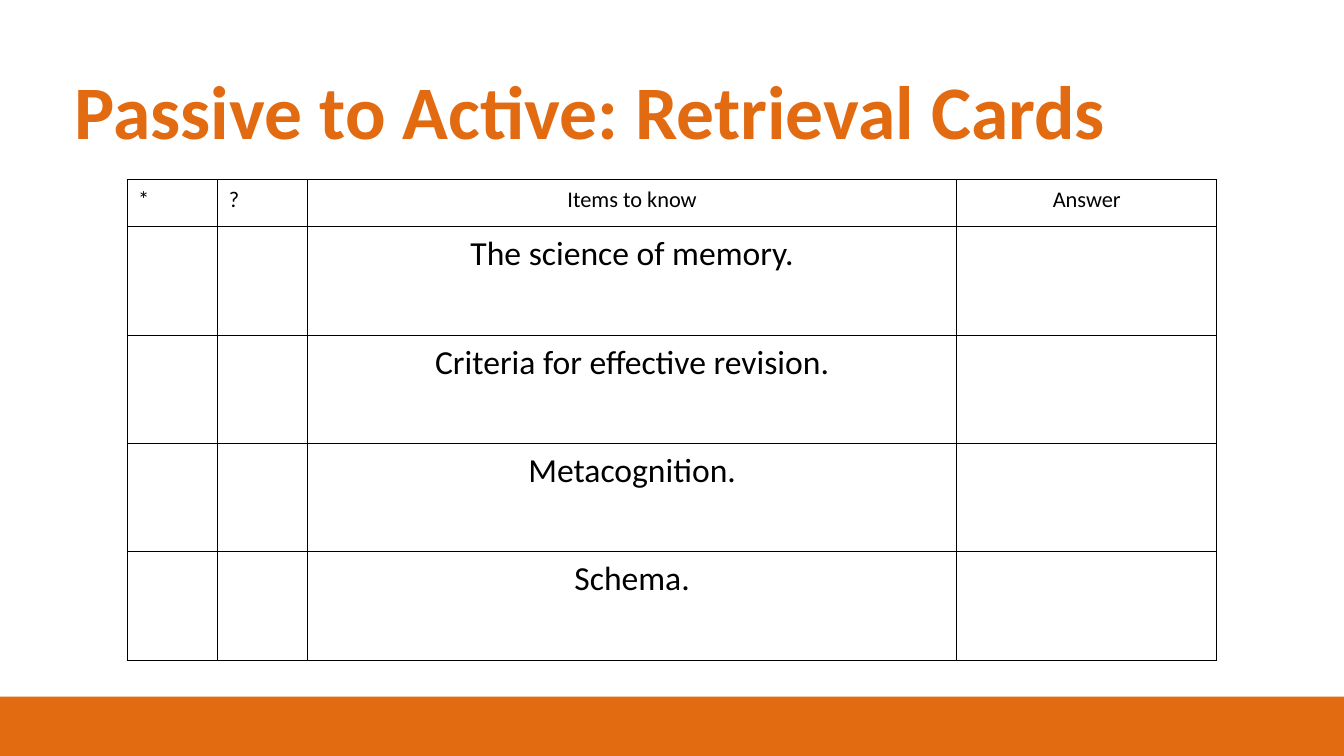
"""Build the retrieval cards slide: a title, a table of items and a footer band."""
from lxml import etree
from pptx import Presentation
from pptx import util as u
from pptx.dml.color import RGBColor
from pptx.enum import shapes, text
from pptx.oxml.ns import qn

HEADING = "Passive to Active: Retrieval Cards"
HEADERS = ["*", "?", "Items to know", "Answer"]
ITEMS = ["The science of memory.", "Criteria for effective revision.",
         "Metacognition.", "Schema."]

ORANGE = RGBColor(0xE2, 0x6A, 0x11)
BLACK = RGBColor(0, 0, 0)
FONT = "Calibri"
WIDTH, HEIGHT = 13.33, 7.5
COLUMNS = [0.9, 0.89, 6.44, 2.58]
HEADER_ROW, ITEM_ROW = 0.47, 1.075
ITEM_COLUMN = HEADERS.index("Items to know")
CARDS_LEFT, CARDS_TOP = 1.26, 1.78
BAND = 0.59
LEFT, CENTER = text.PP_ALIGN.LEFT, text.PP_ALIGN.CENTER


def write(frame, words, size, color=BLACK, bold=False, align=LEFT, spacing=None):
    paragraph = frame.paragraphs[0]
    paragraph.alignment = align
    if spacing:
        paragraph.line_spacing = spacing
    paragraph.font.size = u.Pt(size)
    if words:
        run = paragraph.add_run()
        run.text = words
        run.font.name, run.font.size, run.font.bold = FONT, u.Pt(size), bold
        run.font.color.rgb = color


def outline(cell, color=BLACK, weight=0.75):
    properties = cell._tc.get_or_add_tcPr()
    for side in ("lnL", "lnR", "lnT", "lnB"):
        edge = etree.SubElement(properties, qn(f"a:{side}"), w=str(u.Pt(weight)))
        fill = etree.SubElement(edge, qn("a:solidFill"))
        etree.SubElement(fill, qn("a:srgbClr"), val=str(color))


def add_band(slide):
    band = slide.shapes.add_shape(
        shapes.MSO_SHAPE.RECTANGLE, 0, u.Inches(HEIGHT - BAND),
        u.Inches(WIDTH), u.Inches(BAND))
    band.shadow.inherit = False
    band.fill.solid()
    band.fill.fore_color.rgb = ORANGE
    band.line.fill.background()


def add_heading(slide):
    heading = slide.shapes.add_textbox(
        u.Inches(0.7), u.Inches(0.66), u.Inches(10.76), u.Inches(0.82)).text_frame
    heading.word_wrap = True
    heading.margin_left = heading.margin_right = u.Inches(0.04)
    heading.margin_top, heading.margin_bottom = u.Inches(0.08), 0
    write(heading, HEADING, 54, color=ORANGE, bold=True, spacing=0.9)


def add_cards(slide):
    rows = [HEADERS] + [
        [item if column == ITEM_COLUMN else "" for column in range(len(COLUMNS))]
        for item in ITEMS]
    heights = [HEADER_ROW] + [ITEM_ROW] * len(ITEMS)
    cards = slide.shapes.add_table(
        len(rows), len(COLUMNS), u.Inches(CARDS_LEFT), u.Inches(CARDS_TOP),
        u.Inches(sum(COLUMNS)), u.Inches(sum(heights))).table
    cards.first_row = cards.horz_banding = False
    for column, width in zip(cards.columns, COLUMNS):
        column.width = u.Inches(width)
    for r, (words, height) in enumerate(zip(rows, heights)):
        cards.rows[r].height = u.Inches(height)
        for c, word in enumerate(words):
            cell = cards.cell(r, c)
            cell.margin_left = cell.margin_right = u.Inches(0.11)
            cell.margin_top = cell.margin_bottom = u.Inches(0.07)
            outline(cell)
            cell.fill.background()
            write(cell.text_frame, word, 24 if r else 16,
                  align=CENTER if c >= ITEM_COLUMN else LEFT)


def main():
    deck = Presentation()
    deck.slide_width, deck.slide_height = u.Inches(WIDTH), u.Inches(HEIGHT)
    slide = deck.slides.add_slide(deck.slide_layouts[6])
    add_band(slide)
    add_heading(slide)
    add_cards(slide)
    deck.save("out.pptx")


if __name__ == "__main__":
    main()
